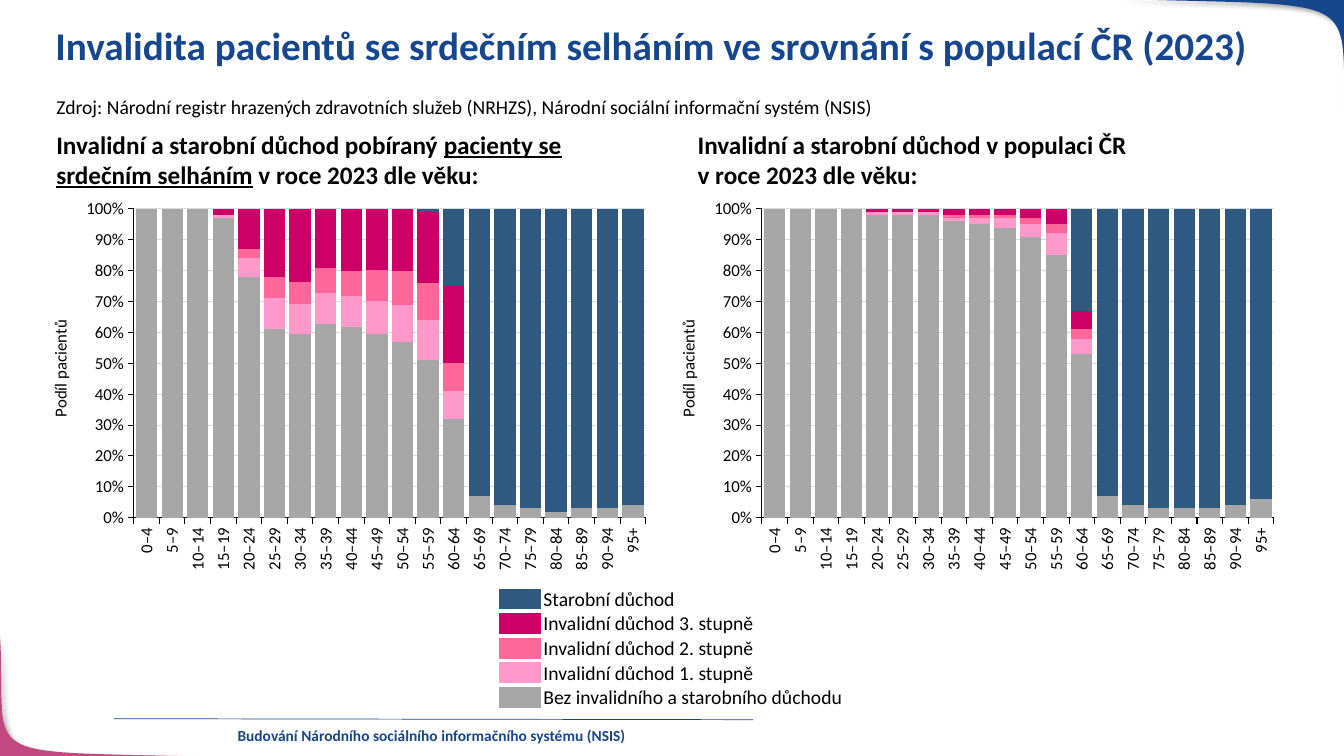
from lxml import etree
from pptx import Presentation
from pptx.chart.data import CategoryChartData
from pptx.dml.color import RGBColor
from pptx.enum.chart import XL_CHART_TYPE as ChartType, XL_TICK_MARK as TickMark
from pptx.enum.text import MSO_ANCHOR as Anchor, MSO_AUTO_SIZE as AutoSize, PP_ALIGN as Align
from pptx.oxml import parse_xml
from pptx.oxml.ns import nsdecls, qn
from pptx.util import Inches, Pt

FONT = "Calibri"
BLUE = RGBColor(0x16, 0x46, 0x8E)
PINK = RGBColor(0xC1, 0x49, 0x7F)
BLACK = RGBColor(0, 0, 0)
GRID = RGBColor(0xD9, 0xD9, 0xD9)
PENSIONS = [
    ("Bez invalidního a starobního důchodu", RGBColor(0xA6, 0xA6, 0xA6)),
    ("Invalidní důchod 1. stupně", RGBColor(0xFF, 0x99, 0xCC)),
    ("Invalidní důchod 2. stupně", RGBColor(0xFF, 0x66, 0x99)),
    ("Invalidní důchod 3. stupně", RGBColor(0xCC, 0x00, 0x66)),
    ("Starobní důchod", RGBColor(0x2E, 0x59, 0x80)),
]
AGES = [f"{age}–{age + 4}" for age in range(0, 95, 5)] + ["95+"]
PATIENTS = [
    [100, 100, 100, 97, 78, 61, 60, 62, 61, 60, 57, 51, 32, 7, 4, 3, 2, 3, 3, 4],
    [0, 0, 0, 1, 6, 10, 10, 10, 10, 11, 12, 13, 9] + [0] * 7,
    [0, 0, 0, 0, 3, 7, 7, 8, 8, 10, 11, 12, 9] + [0] * 7,
    [0, 0, 0, 2, 13, 22, 24, 19, 20, 20, 20, 23, 25] + [0] * 7,
    [0] * 11 + [1, 25, 93, 96, 97, 98, 97, 97, 96],
]
POPULATION = [
    [100, 100, 100, 100, 98, 98, 97, 97, 95, 93, 91, 86, 53, 7, 4, 3, 3, 3, 4, 6],
    [0, 0, 0, 0, 1, 1, 1, 1, 2, 3, 4, 7, 5] + [0] * 7,
    [0, 0, 0, 0, 0, 0, 0, 1, 1, 1, 2, 3, 3] + [0] * 7,
    [0, 0, 0, 0, 1, 1, 1, 2, 2, 2, 3, 5, 6] + [0] * 7,
    [0] * 12 + [33, 93, 96, 97, 97, 97, 96, 94],
]


def add_run(paragraph, text, size, color=BLACK, bold=False, underline=False):
    """Append one formatted run."""
    run = paragraph.add_run()
    run.text = text
    font = run.font
    font.name, font.size, font.bold = FONT, Pt(size), bold
    font.underline = underline
    font.color.rgb = color


def add_text(slide, box, size, lines, color=BLACK, bold=False, wrap=True, align=Align.LEFT):
    """Add a text box whose lines are lists of (text, underlined) pairs."""
    shape = slide.shapes.add_textbox(*map(Inches, box))
    frame = shape.text_frame
    frame.word_wrap = wrap
    frame.auto_size = AutoSize.SHAPE_TO_FIT_TEXT
    paragraph = frame.paragraphs[0]
    paragraph.alignment = align
    for index, line in enumerate(lines):
        if index:
            paragraph.add_line_break()
        for text, underline in line:
            add_run(paragraph, text, size, color, bold, underline)
    return shape


def add_corner(slide, start, control_1, control_2, end, corner, color):
    """Fill a slide corner bounded by a Bézier curve, with a soft shadow."""
    steps = 40
    points = []
    for step in range(steps + 1):
        t = step / steps
        weights = ((1 - t) ** 3, 3 * t * (1 - t) ** 2, 3 * t * t * (1 - t), t ** 3)
        curve = zip(start, control_1, control_2, end)
        points.append([Inches(sum(w * c for w, c in zip(weights, axis))) for axis in curve])
    builder = slide.shapes.build_freeform(*points[0])
    builder.add_line_segments(points[1:] + [[Inches(value) for value in corner]])
    shape = builder.convert_to_shape()
    shape.fill.solid()
    shape.fill.fore_color.rgb = color
    shape.line.fill.background()
    shape.shadow.inherit = False
    effects = shape._element.spPr.find(qn("a:effectLst"))
    effects.append(parse_xml(
        f'<a:outerShdw {nsdecls("a")} blurRad="{Pt(4)}" dist="{Pt(3)}" dir="2700000" '
        'algn="tl" rotWithShape="0"><a:srgbClr val="000000"><a:alpha val="40000"/>'
        '</a:srgbClr></a:outerShdw>'))


def add_footer(slide, left, top, width):
    """Add the footer rule and the project name below it."""
    ends = (left, top, left + width, top + 0.01)
    rule = slide.shapes.add_connector(1, *map(Inches, ends))
    rule.line.color.rgb = BLUE
    rule.line.width = Pt(0.5)
    etree.SubElement(rule._element.spPr, qn("a:effectLst"))
    name = "Budování Národního sociálního informačního systému (NSIS) "
    add_text(slide, (left, top + 0.02, width, 0.29), 11, [[(name, False)]], BLUE, True,
             align=Align.CENTER)


def add_title(slide, box, text):
    """Place and format the title placeholder."""
    title = slide.shapes.title
    title.left, title.top, title.width, title.height = map(Inches, box)
    frame = title.text_frame
    frame.vertical_anchor = Anchor.MIDDLE
    paragraph = frame.paragraphs[0]
    paragraph.alignment = Align.LEFT
    paragraph.line_spacing = 0.9
    add_run(paragraph, text, 28, BLUE, True)


def format_axis(axis):
    """Set the ticks, line and labels of a chart axis."""
    axis.major_tick_mark = TickMark.OUTSIDE
    axis.minor_tick_mark = TickMark.NONE
    axis.format.line.color.rgb = BLACK
    axis.format.line.width = Pt(0.75)
    font = axis.tick_labels.font
    font.name, font.size = FONT, Pt(12)
    font.color.rgb = BLACK


def add_share_chart(slide, left, top, shares, label_left):
    """Add a stacked age chart and its rotated axis label."""
    data = CategoryChartData()
    data.categories = AGES
    for (name, _), values in zip(PENSIONS, shares):
        data.add_series(name, values)
    box = map(Inches, (left, top, 5.77, 3.83))
    chart = slide.shapes.add_chart(ChartType.COLUMN_STACKED_100, *box, data).chart
    chart.has_title = chart.has_legend = False
    chart.font.name, chart.font.size = FONT, Pt(14)
    chart.font.color.rgb = BLACK
    plot = chart.plots[0]
    plot.gap_width, plot.overlap, plot.vary_by_categories = 20, 100, False
    for series, (_, color) in zip(plot.series, PENSIONS):
        series.format.fill.solid()
        series.format.fill.fore_color.rgb = color
    ages, percent = chart.category_axis, chart.value_axis
    format_axis(ages)
    format_axis(percent)
    ages._element.find(qn("c:txPr")).find(qn("a:bodyPr")).set("rot", "-5400000")
    percent.minimum_scale, percent.maximum_scale, percent.major_unit = 0, 1, 0.1
    percent.tick_labels.number_format = "0%"
    percent.tick_labels.number_format_is_linked = False
    percent.major_gridlines.format.line.color.rgb = GRID
    percent.major_gridlines.format.line.width = Pt(0.75)
    plot_area = chart._chartSpace.chart.plotArea
    for old in plot_area.findall(qn("c:layout")):
        plot_area.remove(old)
    modes = '<c:layoutTarget val="inner"/><c:xMode val="edge"/><c:yMode val="edge"/>'
    sizes = '<c:x val="0.1"/><c:y val="0.04"/><c:w val="0.88"/><c:h val="0.8"/>'
    plot_area.insert(0, parse_xml(
        f'<c:layout {nsdecls("c")}><c:manualLayout>{modes}{sizes}</c:manualLayout></c:layout>'))
    label = add_text(slide, (label_left, top + 1.58, 1.17, 0.3), 12,
                     [[("Podíl pacientů", False)]], wrap=False)
    label.rotation = 270


def add_legend(slide, left, top):
    """Add the shared legend as a table of swatches and names."""
    box = map(Inches, (left, top, 3.48, 1.22))
    table = slide.shapes.add_table(len(PENSIONS), 2, *box).table
    table.first_row = table.horz_banding = False
    table.columns[0].width, table.columns[1].width = Inches(0.45), Inches(3.03)
    for row, (name, color) in enumerate(reversed(PENSIONS)):
        for cell in table.rows[row].cells:
            cell.margin_left = cell.margin_right = cell.margin_top = Inches(0.01)
            cell.margin_bottom = 0
            cell.vertical_anchor = Anchor.MIDDLE
            for side in ("lnL", "lnR", "lnT", "lnB"):
                cell._tc.get_or_add_tcPr().append(parse_xml(
                    f'<a:{side} {nsdecls("a")} w="{Pt(3)}"><a:solidFill>'
                    f'<a:srgbClr val="FFFFFF"/></a:solidFill></a:{side}>'))
        swatch, label = table.rows[row].cells
        swatch.fill.solid()
        swatch.fill.fore_color.rgb = color
        swatch.text_frame.paragraphs[0]._p.get_or_add_endParaRPr().set("sz", "1000")
        label.fill.background()
        add_run(label.text_frame.paragraphs[0], name, 14)


def build_slide(presentation):
    """Build the disability comparison slide."""
    slide = presentation.slides.add_slide(presentation.slide_layouts[5])
    add_corner(slide, (2.13, 7.51), (-0.34, 7.44), (0.08, 7.59), (0, 6.3), (-0.01, 7.51), PINK)
    add_corner(slide, (11.11, -0.01), (13.7, 0.07), (13.26, -0.1), (13.35, 1.42),
               (13.35, -0.01), BLUE)
    add_footer(slide, 1.13, 7.13, 6.34)
    add_title(slide, (0.45, 0.13, 12.39, 0.69),
              "Invalidita pacientů se srdečním selháním ve srovnání s populací ČR (2023)")
    source = ("Zdroj: Národní registr hrazených zdravotních služeb (NRHZS), "
              "Národní sociální informační systém (NSIS)")
    add_text(slide, (0.46, 0.89, 8.45, 0.34), 14, [[(source, False)]], wrap=False)
    patients = [[("Invalidní a starobní důchod pobíraný ", False),
                 ("pacienty se srdečním selháním", True), (" v roce 2023 dle věku:", False)]]
    population = [[("Invalidní a starobní důchod v populaci ČR", False)],
                  [("v roce 2023 dle věku:", False)]]
    add_text(slide, (0.46, 1.23, 5.92, 0.71), 18, patients, bold=True)
    add_text(slide, (6.82, 1.23, 5.92, 0.71), 18, population, bold=True)
    add_share_chart(slide, 0.75, 1.92, PATIENTS, 0.01)
    add_share_chart(slide, 6.98, 1.92, POPULATION, 6.24)
    add_legend(slide, 4.93, 5.82)


def main():
    """Create and save the presentation."""
    presentation = Presentation()
    presentation.slide_width, presentation.slide_height = Inches(13.33), Inches(7.5)
    build_slide(presentation)
    presentation.save("out.pptx")


if __name__ == "__main__":
    main()
